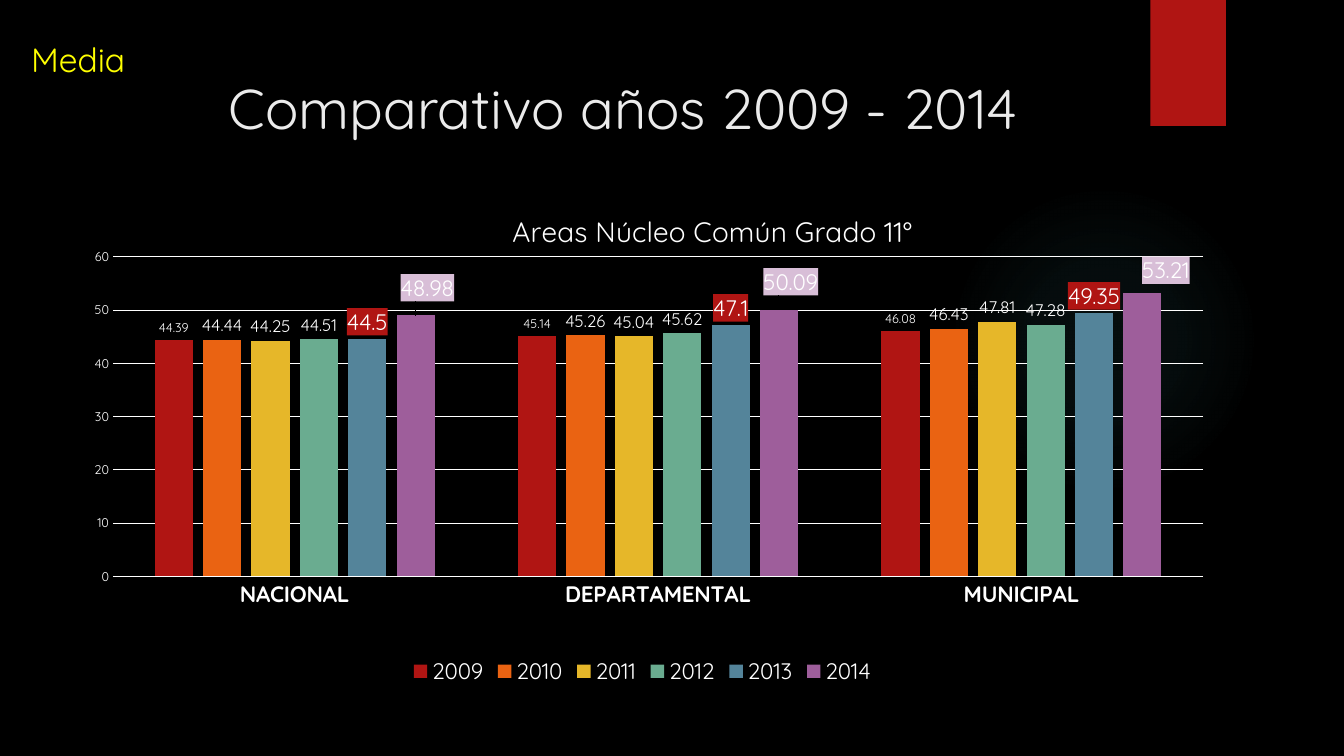
import pptx
import pptx.chart.data
import pptx.dml.color
import pptx.enum.chart
import pptx.enum.shapes
import pptx.enum.text
import pptx.oxml
import pptx.oxml.ns
import pptx.util

Inches = pptx.util.Inches
RGBColor = pptx.dml.color.RGBColor
XL = pptx.enum.chart
ANCHOR = pptx.enum.text.MSO_ANCHOR
SHAPE = pptx.enum.shapes.MSO_SHAPE
qn = pptx.oxml.ns.qn

FONT = "Quicksand"
BLACK = RGBColor(0x00, 0x00, 0x00)
WHITE = RGBColor(0xFF, 0xFF, 0xFF)
OFF_WHITE = RGBColor(0xEB, 0xEB, 0xEB)
YELLOW = RGBColor(0xFF, 0xFF, 0x00)
RED = RGBColor(0xB0, 0x15, 0x13)
ORANGE = RGBColor(0xEA, 0x63, 0x12)
GOLD = RGBColor(0xE6, 0xB7, 0x29)
GREEN = RGBColor(0x6A, 0xAC, 0x90)
BLUE = RGBColor(0x54, 0x84, 0x9A)
PURPLE = RGBColor(0x9E, 0x5E, 0x9B)
LILAC = RGBColor(0xD8, 0xBE, 0xD7)
TEAL = RGBColor(0x50, 0xB9, 0xC1)

AREAS = ["NACIONAL", "DEPARTAMENTAL", "MUNICIPAL"]
YEARS = [
    ("2009", (44.39, 45.14, 46.08), RED, 9, None),
    ("2010", (44.44, 45.26, 46.43), ORANGE, 12, None),
    ("2011", (44.25, 45.04, 47.81), GOLD, 12, None),
    ("2012", (44.51, 45.62, 47.28), GREEN, 12, None),
    ("2013", (44.5, 47.1, 49.35), BLUE, 16, RED),
    ("2014", (48.98, 50.09, 53.21), PURPLE, 16, LILAC),
]
LABEL_SHIFTS_2014 = [(0.01, -0.02), (0.01, -0.02), (0.02, -0.01)]


def xml(text):
    """Parse a fragment that uses the a: and c: prefixes."""
    head, tail = text.split(">", 1)
    slash = "/" if head.endswith("/") else ""
    return pptx.oxml.parse_xml(
        f"{head.rstrip('/')} {pptx.oxml.ns.nsdecls('a', 'c')}{slash}>{tail}")


def manual_layout(x, y, w=None, h=None, edge=True):
    """Return a chart layout in fractions of the chart, or an offset when edge is False."""
    target = '<c:layoutTarget val="inner"/>' if w else ""
    modes = '<c:xMode val="edge"/><c:yMode val="edge"/>' if edge else ""
    size = f'<c:w val="{w}"/><c:h val="{h}"/>' if w else ""
    return xml(f'<c:layout><c:manualLayout>{target}{modes}<c:x val="{x}"/>'
               f'<c:y val="{y}"/>{size}</c:manualLayout></c:layout>')


def set_font(font, size, color=WHITE, bold=False):
    """Apply the slide font with the given size and colour."""
    font.name, font.size, font.bold = FONT, pptx.util.Pt(size), bold
    font.color.rgb = color


def set_line(line):
    """Make a thin white line."""
    line.color.rgb, line.width = WHITE, pptx.util.Pt(0.75)


def fill_label(label, color):
    """Put a solid fill behind a data label element."""
    label.find(qn("c:txPr")).addprevious(xml(
        f'<c:spPr><a:solidFill><a:srgbClr val="{color}"/></a:solidFill></c:spPr>'))


def add_block(s, kind, x, y, w, h):
    """Add a shape without line or shadow."""
    sp = s.shapes.add_shape(kind, Inches(x), Inches(y), Inches(w), Inches(h))
    sp.shadow.inherit = False
    sp.line.fill.background()
    return sp


def add_backdrop(s):
    """Draw the black background, the soft glow and the red tab."""
    s.background.fill.solid()
    s.background.fill.fore_color.rgb = BLACK
    glow = add_block(s, SHAPE.OVAL, 9.41, 1.83, 3.08, 3.08)
    glow.fill.background()
    stops = "".join(
        f'<a:gs pos="{pos}000"><a:srgbClr val="{TEAL}"><a:alpha val="{alpha}000"/></a:srgbClr></a:gs>'
        for pos, alpha in ((0, 7), (36, 6), (69, 0)))
    no_fill = glow.element.spPr.find(qn("a:noFill"))
    no_fill.getparent().replace(no_fill, xml(
        f'<a:gradFill><a:gsLst>{stops}</a:gsLst><a:path path="circle">'
        '<a:fillToRect l="50000" t="50000" r="50000" b="50000"/></a:path></a:gradFill>'))
    tab = add_block(s, SHAPE.RECTANGLE, 11.41, 0, 0.75, 1.25)
    tab.fill.solid()
    tab.fill.fore_color.rgb = RED


def add_text(s, text, x, y, w, h, size, color, anchor):
    """Add one line of text in the given box."""
    tf = s.shapes.add_textbox(Inches(x), Inches(y), Inches(w), Inches(h)).text_frame
    tf.word_wrap, tf.vertical_anchor = True, anchor
    r = tf.paragraphs[0].add_run()
    r.text = text
    set_font(r.font, size, color)


def style_series(series, color, size, label_fill):
    """Colour one year's columns and its value labels."""
    series.format.fill.solid()
    series.format.fill.fore_color.rgb = color
    labels = series.data_labels
    labels.show_value = True
    labels.position = XL.XL_LABEL_POSITION.OUTSIDE_END
    set_font(labels.font, size)
    if label_fill:
        fill_label(series._element.find(qn("c:dLbls")), label_fill)


def shift_labels(series, shifts, size, label_fill):
    """Move each value label of a series away from its column."""
    for i, (dx, dy) in enumerate(shifts):
        label = series.points[i].data_label
        set_font(label.font, size)
        label.position = XL.XL_LABEL_POSITION.OUTSIDE_END
        element = series._element.find(qn("c:dLbls")).findall(qn("c:dLbl"))[i]
        element.find(qn("c:idx")).addnext(manual_layout(dx, dy, edge=False))
        fill_label(element, label_fill)


def add_axes(chart):
    """Style the category and value axes."""
    areas, scores = chart.category_axis, chart.value_axis
    for axis, size in ((areas, 16), (scores, 9)):
        axis.major_tick_mark = axis.minor_tick_mark = XL.XL_TICK_MARK.NONE
        set_font(axis.tick_labels.font, size, bold=axis is areas)
    set_line(areas.format.line)
    scores.minimum_scale, scores.maximum_scale, scores.major_unit = 0, 60, 10
    scores.format.line.fill.background()
    set_line(scores.major_gridlines.format.line)


def add_scores_chart(s, x, y, w, h):
    """Add the column chart that compares the years by area."""
    data = pptx.chart.data.CategoryChartData()
    data.categories = AREAS
    for name, values, *_ in YEARS:
        data.add_series(name, values)
    chart = s.shapes.add_chart(XL.XL_CHART_TYPE.COLUMN_CLUSTERED, Inches(x), Inches(y),
                               Inches(w), Inches(h), data).chart
    set_font(chart.font, 10)
    chart.has_title = True
    r = chart.chart_title.text_frame.paragraphs[0].add_run()
    r.text = "Areas Núcleo Común Grado 11°"
    set_font(r.font, 20)
    title = chart.chart_title._element
    for old in title.findall(qn("c:layout")):
        title.remove(old)
    title.find(qn("c:tx")).addnext(manual_layout(0.385, 0.05))
    chart.has_legend = True
    chart.legend.position = XL.XL_LEGEND_POSITION.BOTTOM
    chart.legend.include_in_layout = False
    set_font(chart.legend.font, 16)
    add_axes(chart)
    plot = chart.plots[0]
    plot.gap_width, plot.overlap, plot.vary_by_categories = 219, -27, False
    for series, (_, _, color, size, label_fill) in zip(plot.series, YEARS):
        style_series(series, color, size, label_fill)
    shift_labels(plot.series[-1], LABEL_SHIFTS_2014, 16, LILAC)
    area = chart._chartSpace.chart.plotArea
    for old in area.findall(qn("c:layout")):
        area.remove(old)
    area.insert(0, manual_layout(0.049, 0.15, 0.929, 0.628))


def main():
    """Build the slide and save it."""
    prs = pptx.Presentation()
    prs.slide_width, prs.slide_height = Inches(13.33), Inches(7.5)
    s = prs.slides.add_slide(prs.slide_layouts[6])
    add_backdrop(s)
    add_scores_chart(s, 0.55, 1.79, 11.64, 5.05)
    add_text(s, "Comparativo años 2009 - 2014", 2.17, 0.64, 8.61, 0.85, 40, OFF_WHITE, ANCHOR.MIDDLE)
    add_text(s, "Media", 0.21, 0.34, 1.49, 0.5, 24, YELLOW, ANCHOR.TOP)
    prs.save("out.pptx")


if __name__ == "__main__":
    main()
